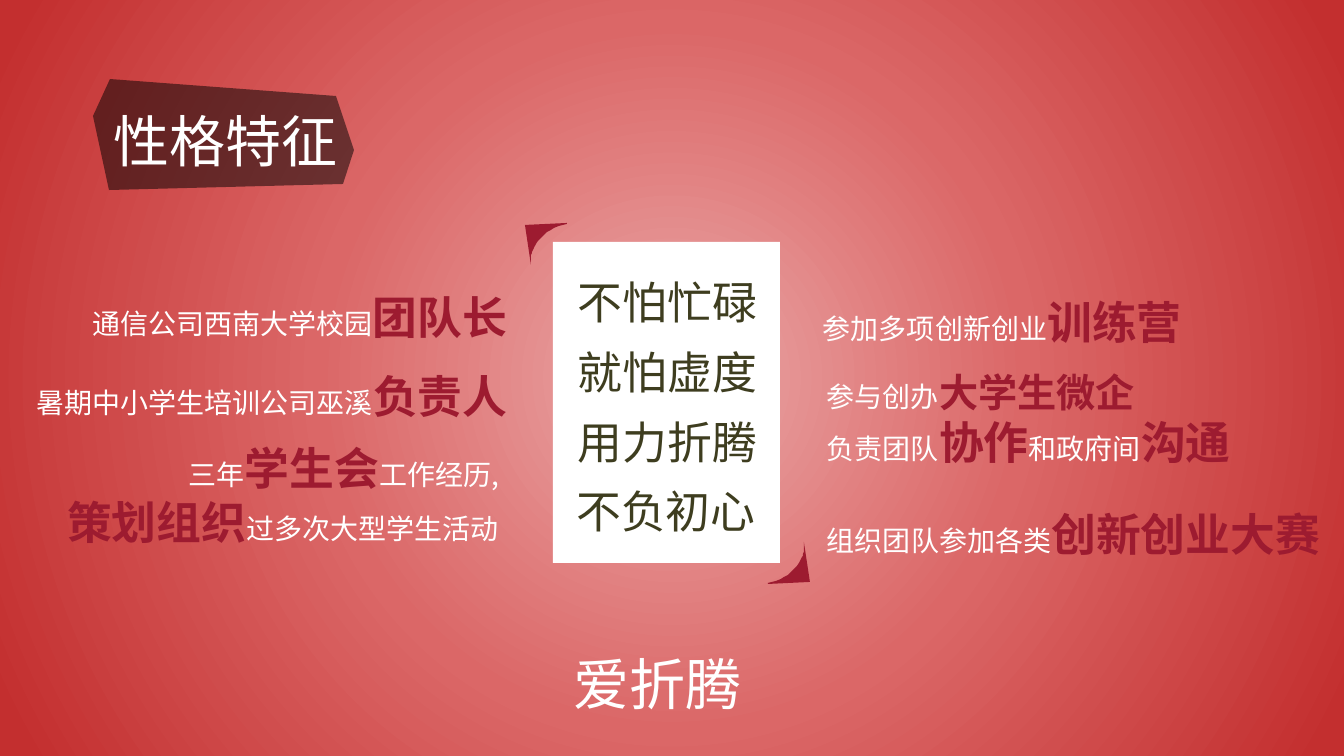
from dataclasses import dataclass

from lxml import etree
from pptx import Presentation
from pptx import util as u
from pptx.dml.color import RGBColor
from pptx.enum import shapes, text
from pptx.oxml import ns, parse_xml

WIDTH, HEIGHT = 1344, 756
EMU_PER_PX = 12192000 / WIDTH

WHITE = RGBColor(0xFF, 0xFF, 0xFF)
CRIMSON = RGBColor(0x9D, 0x1B, 0x30)
OLIVE = RGBColor(0x3E, 0x3D, 0x1F)
BLACK = RGBColor(0x00, 0x00, 0x00)
GLOW = ((0, RGBColor(0xEA, 0xA8, 0xA8)),
        (46, RGBColor(0xDB, 0x67, 0x67)),
        (97, RGBColor(0xC3, 0x2F, 0x2F)))

JP, SC = "Noto Sans CJK JP", "Noto Sans CJK SC"
LEFT, CENTER, RIGHT = text.PP_ALIGN.LEFT, text.PP_ALIGN.CENTER, text.PP_ALIGN.RIGHT


@dataclass(frozen=True)
class Style:
    size: int
    color: RGBColor = WHITE
    bold: bool = False
    face: str = SC


HEADING = Style(40, face=JP)
PLAIN = Style(20)
STRONG = Style(32, CRIMSON, True)
STRONG_SMALL = Style(28, CRIMSON, True)
QUOTE = Style(32, OLIVE)


@dataclass(frozen=True)
class Block:
    box: tuple[int, int, int, int]
    lines: tuple
    align: text.PP_ALIGN = LEFT
    spacing: float = 1.0
    wrap: bool = True


TITLE = Block((93, 101, 265, 78), ((("性格特征", HEADING),),), CENTER)

BLOCKS = (
    Block((525, 645, 265, 78), ((("爱折腾", HEADING),),), CENTER),
    Block((496, 254, 343, 225),
          tuple(((words, QUOTE),) for words in ("不怕忙碌", "就怕虚度", "用力折腾")),
          CENTER, 1.3),
    Block((496, 463, 340, 81), ((("不负初心", QUOTE),),), CENTER, 1.3),
    Block((77, 258, 446, 95),
          ((("通信公司西南大学校园", PLAIN), ("团队长", STRONG)),), CENTER, 1.5, False),
    Block((21, 337, 502, 95),
          ((("暑期中小学生培训公司巫溪", PLAIN), ("负责人", STRONG)),), CENTER, 1.5, False),
    Block((50, 436, 459, 122),
          ((("三年", PLAIN), ("学生会", STRONG), ("工作经历,", PLAIN)),
           (("策划组织", STRONG), ("过多次大型学生活动", PLAIN))), RIGHT),
    Block((813, 263, 529, 95),
          ((("参加多项创新创业", PLAIN), ("训练营", STRONG)),), LEFT, 1.5),
    Block((817, 363, 434, 115),
          ((("参与创办", PLAIN), ("大学生微企", STRONG_SMALL)),
           (("负责团队", PLAIN), ("协作", STRONG), ("和政府间", PLAIN), ("沟通", STRONG))),
          wrap=False),
    Block((817, 475, 525, 95),
          ((("组织团队参加各类", PLAIN), ("创新创业大赛", STRONG)),), LEFT, 1.5, False),
)

BADGE = ((110, 79), (93, 116), (109, 190), (343, 184), (354, 150), (336, 96))
CARD = (553, 242, 227, 321)
CORNER_CURVES = (((38, 2), (26, 5), (16, 12), (11, 21)),
                 ((11, 21), (8, 26), (6, 31), (6, 36)))
CORNERS = ((525, 223, 1), (810, 584, -1))


def px(length: float) -> u.Emu:
    return u.Emu(round(length * EMU_PER_PX))


def set_attributes(target, values: dict) -> None:
    for name, value in values.items():
        setattr(target, name, value)


def paint(shape, color: RGBColor) -> None:
    shape.shadow.inherit = False
    shape.fill.solid()
    shape.fill.fore_color.rgb = color
    shape.line.fill.background()


def paint_background(slide) -> None:
    stops = "".join(
        f'<a:gs pos="{position * 1000}"><a:srgbClr val="{color}"/></a:gs>'
        for position, color in GLOW)
    background = parse_xml(
        f'<p:bg {ns.nsdecls("p", "a")}><p:bgPr><a:gradFill rotWithShape="1">'
        f'<a:gsLst>{stops}</a:gsLst><a:path path="circle">'
        '<a:fillToRect l="50000" t="50000" r="50000" b="50000"/></a:path>'
        '</a:gradFill><a:effectLst/></p:bgPr></p:bg>')
    slide.element.cSld.insert(0, background)


def add_outline(slide, points, color: RGBColor):
    builder = slide.shapes.build_freeform(*points[0], scale=EMU_PER_PX)
    builder.add_line_segments(points[1:], close=True)
    shape = builder.convert_to_shape()
    paint(shape, color)
    return shape


def bezier(curve, steps: int = 8) -> list[tuple[float, float]]:
    points = []
    for step in range(steps + 1):
        t = step / steps
        weights = ((1 - t) ** 3, 3 * t * (1 - t) ** 2, 3 * t * t * (1 - t), t ** 3)
        points.append(tuple(sum(weight * point[axis] for weight, point in zip(weights, curve))
                            for axis in (0, 1)))
    return points


def add_corner(slide, left: int, top: int, direction: int) -> None:
    first, second = map(bezier, CORNER_CURVES)
    outline = [(42, 0), (42, 1), *first, *second[1:], (6, 42), (0, 2)]
    add_outline(slide, [(left + direction * x, top + direction * y) for x, y in outline], CRIMSON)


def add_badge(slide) -> None:
    badge = add_outline(slide, BADGE, BLACK)
    color = badge.element.spPr.find(".//" + ns.qn("a:srgbClr"))
    etree.SubElement(color, ns.qn("a:alpha"), val="51000")


def add_run(paragraph, words: str, style: Style) -> None:
    run = paragraph.add_run()
    run.text = words
    set_attributes(run.font, {"size": u.Pt(style.size), "bold": style.bold, "name": style.face})
    run.font.color.rgb = style.color
    etree.SubElement(run.font._element, ns.qn("a:ea"), typeface=style.face)


def write_block(shape, block: Block) -> None:
    frame = shape.text_frame
    set_attributes(frame, {"word_wrap": block.wrap,
                           "auto_size": text.MSO_AUTO_SIZE.SHAPE_TO_FIT_TEXT,
                           "vertical_anchor": text.MSO_ANCHOR.TOP})
    for index, line in enumerate(block.lines):
        paragraph = frame.add_paragraph() if index else frame.paragraphs[0]
        set_attributes(paragraph, {"alignment": block.align, "line_spacing": block.spacing})
        for words, style in line:
            add_run(paragraph, words, style)


def main() -> None:
    presentation = Presentation()
    set_attributes(presentation, {"slide_width": px(WIDTH), "slide_height": px(HEIGHT)})
    slide = presentation.slides.add_slide(presentation.slide_layouts[5])
    paint_background(slide)

    card = slide.shapes.add_shape(shapes.MSO_SHAPE.RECTANGLE, *map(px, CARD))
    paint(card, WHITE)
    for block in BLOCKS:
        write_block(slide.shapes.add_textbox(*map(px, block.box)), block)
    for corner in CORNERS:
        add_corner(slide, *corner)
    add_badge(slide)

    title = slide.shapes.title
    set_attributes(title, dict(zip(("left", "top", "width", "height"), map(px, TITLE.box))))
    write_block(title, TITLE)
    slide.shapes._spTree.append(title.element)

    presentation.save("out.pptx")


if __name__ == "__main__":
    main()
